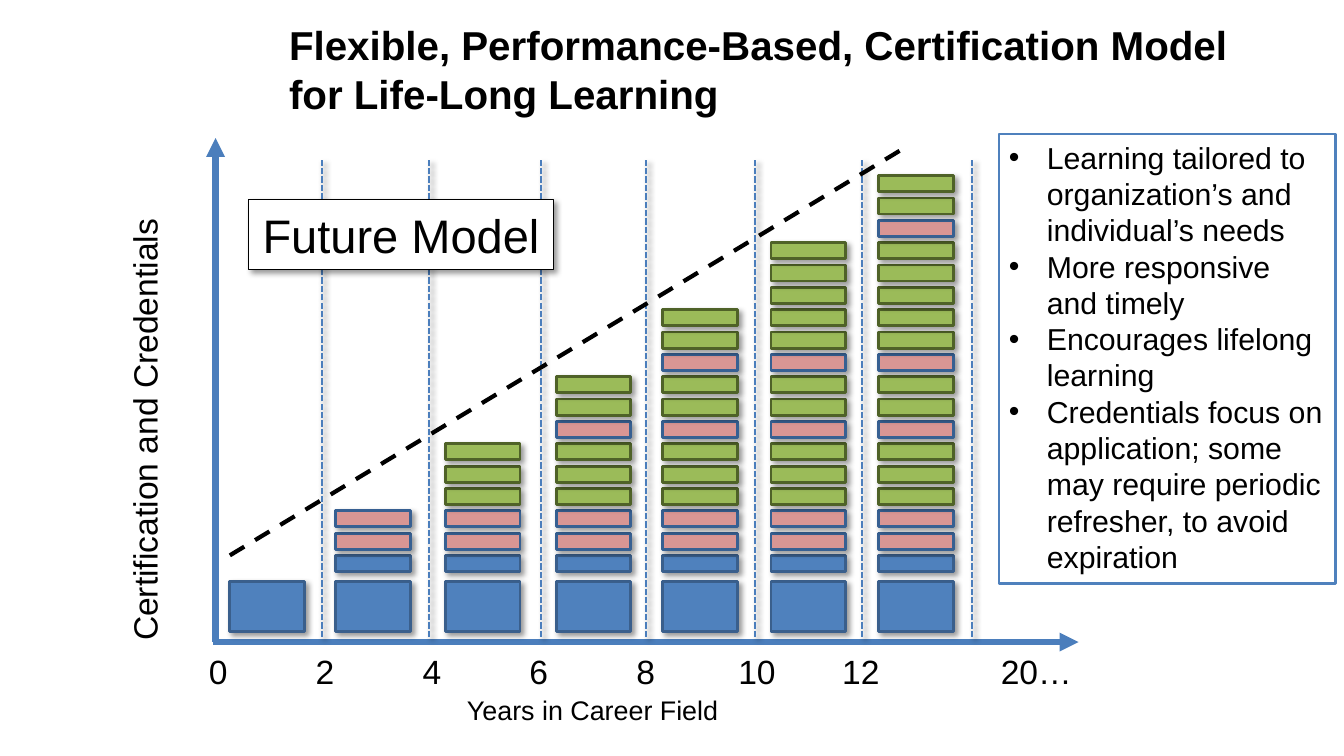
from dataclasses import dataclass

from lxml import etree
from pptx import Presentation
from pptx.dml.color import RGBColor
from pptx.enum.dml import MSO_LINE
from pptx.enum.shapes import MSO_CONNECTOR, MSO_SHAPE
from pptx.enum.text import MSO_ANCHOR, PP_ALIGN
from pptx.oxml.ns import qn
from pptx.util import Pt

RECT = MSO_SHAPE.RECTANGLE
STRAIGHT = MSO_CONNECTOR.STRAIGHT
DASH, SYS_DASH = MSO_LINE.DASH, MSO_LINE.SQUARE_DOT
LEFT, CENTER = PP_ALIGN.LEFT, PP_ALIGN.CENTER
TOP, MIDDLE = MSO_ANCHOR.TOP, MSO_ANCHOR.MIDDLE


@dataclass(frozen=True)
class Theme:
    font: str = "Arial"
    black: str = "000000"
    white: str = "FFFFFF"
    axis: str = "4B7EBC"
    panel_line: str = "4F81BD"
    blue: tuple = ("4F81BD", "3A5F8C")
    pink: tuple = ("D99694", "376092")
    green: tuple = ("9BBB59", "4F6228")
    title: float = 28.8
    model: float = 33.6
    label: float = 24
    bullet: float = 21.6
    caption: float = 19.2


T = Theme()

TITLE = "Flexible, Performance-Based, Certification Model for Life-Long Learning"
BENEFITS = [
    "Learning tailored to organization’s and individual’s needs",
    "More responsive and timely",
    "Encourages lifelong learning",
    "Credentials focus on application; some may require periodic refresher, to avoid expiration",
]
# Credentials from the bottom up; each later column holds three more of them
CREDENTIALS = [{"B": T.blue, "P": T.pink, "G": T.green}[c] for c in "BPPGGGPGGPGGGGGPGG"]
CREDENTIALS_PER_COLUMN = 3
COLUMN_X = [10.2, 85.8, 164.2, 243.4, 319.4, 396.8, 473.8]
DIVIDER_X = [75.7, 152.7, 232.6, 307.5, 385.3, 461.6, 540.1]
YEARS = {"0": 1.9, "2": 78.2, "4": 154.5, "6": 230.8, "8": 307.2,
         "10": 386.7, "12": 460.9, "20…": 586.2}


def rgb(color):
    return RGBColor.from_string(color)


def set_shadow(shape, visible):
    """Replace the theme shadow by the soft slide shadow, or by none."""
    effects = etree.SubElement(shape._element.spPr, qn("a:effectLst"))
    if visible:
        shadow = etree.SubElement(effects, qn("a:outerShdw"), blurRad=str(Pt(4)),
                                  dist=str(Pt(3)), dir="2700000", rotWithShape="0")
        color = etree.SubElement(shadow, qn("a:srgbClr"), val=T.black)
        etree.SubElement(color, qn("a:alpha"), val="40000")


def add_line(s, start, end, color, width, dash=None, arrow=False, shadow=False):
    line = s.shapes.add_connector(STRAIGHT, *map(Pt, start + end))
    line.line.color.rgb = rgb(color)
    line.line.width = Pt(width)
    if dash:
        line.line.dash_style = dash
    if arrow:
        etree.SubElement(line.line._get_or_add_ln(), qn("a:tailEnd"), type="triangle")
    set_shadow(line, shadow)


def add_box(s, box, fill, outline, width, shadow=True):
    sp = s.shapes.add_shape(RECT, *map(Pt, box))
    sp.fill.solid()
    sp.fill.fore_color.rgb = rgb(fill)
    sp.line.color.rgb = rgb(outline)
    sp.line.width = Pt(width)
    set_shadow(sp, shadow)
    return sp


def write(sp, paragraphs, size, align=CENTER, anchor=MIDDLE, wrap=False,
          bold=False, spacing=None, bullet_indent=None):
    tf = sp.text_frame
    tf.word_wrap = wrap
    tf.vertical_anchor = anchor
    tf.text = "\n".join(paragraphs)
    for p in tf.paragraphs:
        p.alignment = align
        if spacing:
            p.line_spacing = Pt(spacing)
        if bullet_indent:
            pPr = p._p.get_or_add_pPr()
            pPr.set("marL", str(Pt(bullet_indent)))
            pPr.set("indent", str(-Pt(bullet_indent)))
            etree.SubElement(pPr, qn("a:buFont"), typeface=T.font)
            etree.SubElement(pPr, qn("a:buChar"), char="•")
        for r in p.runs:
            r.font.name = T.font
            r.font.size = Pt(size)
            r.font.bold = bold
            r.font.color.rgb = rgb(T.black)


def add_label(s, text, center_x, center_y, width, height, size, rotation=0):
    sp = s.shapes.add_textbox(Pt(center_x - width / 2), Pt(center_y - height / 2),
                              Pt(width), Pt(height))
    sp.rotation = rotation
    write(sp, [text], size)


def add_title(s, box):
    sp = s.shapes.add_textbox(*map(Pt, box))
    write(sp, [TITLE], T.title, LEFT, TOP, wrap=True, bold=True, spacing=35)


def add_benefits(s, box):
    sp = add_box(s, box, T.white, T.panel_line, 1.75, shadow=False)
    write(sp, BENEFITS, T.bullet, LEFT, TOP, wrap=True, spacing=25.9, bullet_indent=27.2)


def add_column(s, left, base, credentials):
    """Stack thin credential bars on the large entry block."""
    width, block, bar, pitch = 53.3, 36, 11.5, 15.96
    add_box(s, (left, base - block, width, block), *T.blue, 2)
    for i, (fill, outline) in enumerate(credentials):
        top = base - 54.6 - i * pitch
        add_box(s, (left, top, width, bar), fill, outline, 2)


def add_growth_chart(s, box):
    left, top, width, height = box
    base = top + height
    add_line(s, (left, base), (left, top), T.axis, 4.5, arrow=True)
    add_line(s, (left - 2, base), (left + width, base), T.axis, 4.5, arrow=True)
    for x in DIVIDER_X:
        add_line(s, (left + x, base - 3.6), (left + x, top + 15.9),
                 T.axis, 1.5, SYS_DASH, shadow=True)
    for i, x in enumerate(COLUMN_X):
        add_column(s, left + x, base - 7.2, CREDENTIALS[:i * CREDENTIALS_PER_COLUMN])
    add_line(s, (left + 10.2, base - 61.9), (left + 491.8, top + 7.2), T.black, 3, DASH)

    for year, x in YEARS.items():
        add_label(s, year, left + x, base + 20.6, 32 + 18 * len(year), 38, T.label)
    add_label(s, "Years in Career Field", left + 269.4, base + 48.2, 199, 32, T.caption)
    add_label(s, "Certification and Credentials", left - 51, base - 151.5,
              322.6, 38.2, T.label, rotation=270)
    model = add_box(s, (left + 23.8, top + 44, 217.4, 49.7), T.white, T.black, 0.75)
    write(model, ["Future Model"], T.model)


def main():
    prs = Presentation()
    prs.slide_width, prs.slide_height = Pt(960), Pt(540)
    s = prs.slides.add_slide(prs.slide_layouts[6])
    add_title(s, (199.4, 10.1, 720, 69.1))
    add_benefits(s, (713.5, 95.8, 240.5, 321.1))
    add_growth_chart(s, (154, 98.6, 616.4, 360))
    prs.save("out.pptx")


if __name__ == "__main__":
    main()
